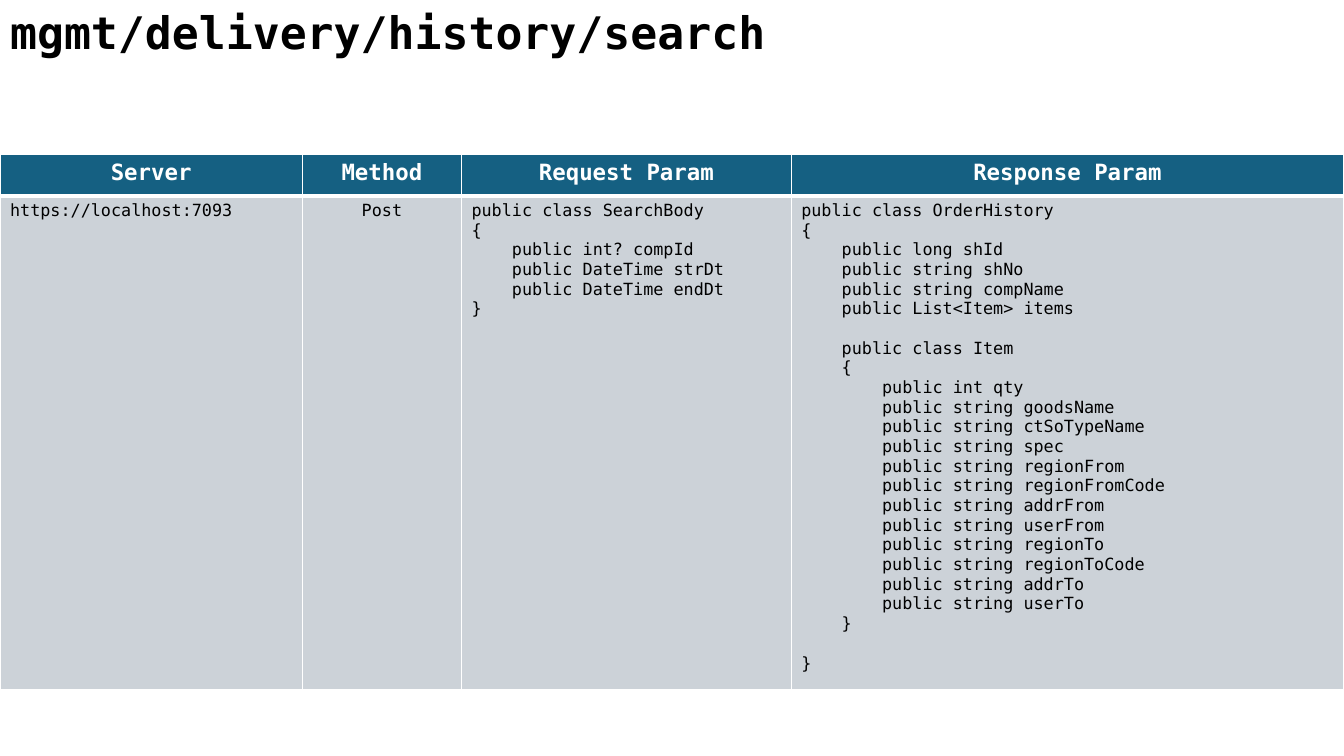
from lxml.etree import SubElement
from pptx import Presentation
from pptx.dml.color import RGBColor
from pptx.enum.text import MSO_ANCHOR, MSO_AUTO_SIZE, PP_ALIGN
from pptx.oxml.ns import qn
from pptx.util import Cm, Pt

HUES = {"ink": "000000", "paper": "FFFFFF", "head": "156082", "body": "CCD2D8"}
FONT = "DejaVu Sans Mono"

REQUEST = """public class SearchBody
{
    public int? compId
    public DateTime strDt
    public DateTime endDt
}"""

RESPONSE = """public class OrderHistory
{
    public long shId
    public string shNo
    public string compName
    public List<Item> items

    public class Item
    {
        public int qty
        public string goodsName
        public string ctSoTypeName
        public string spec
        public string regionFrom
        public string regionFromCode
        public string addrFrom
        public string userFrom
        public string regionTo
        public string regionToCode
        public string addrTo
        public string userTo
    }

}"""

COLUMNS = [
    ("Server", 7.62, "https://localhost:7093", PP_ALIGN.LEFT),
    ("Method", 4.01, "Post", PP_ALIGN.CENTER),
    ("Request Param", 8.31, REQUEST, PP_ALIGN.LEFT),
    ("Response Param", 13.92, RESPONSE, PP_ALIGN.LEFT),
]
ROWS = [1.04, 12.14]


class Deck:
    def __init__(self):
        self.show = Presentation()
        self.show.slide_width = Cm(33.87)
        self.show.slide_height = Cm(19.05)
        self.slide = self.show.slides.add_slide(self.show.slide_layouts[5])

    def label(self, frame, text, size, hue, bold, align):
        frame.text = text
        for para in frame.paragraphs:
            para.alignment = align
            for run in para.runs:
                run.font.name = FONT
                run.font.size = Pt(size)
                run.font.bold = bold
                run.font.color.rgb = RGBColor.from_string(HUES[hue])
            if not para.runs:
                end = SubElement(para._p, qn("a:endParaRPr"), sz=str(size * 100))
                SubElement(end, qn("a:latin"), typeface=FONT)

    def title(self, text, width, height):
        box = self.slide.shapes.title
        box.left, box.top = Cm(0), Cm(0)
        box.width, box.height = Cm(width), Cm(height)
        frame = box.text_frame
        frame.word_wrap = False
        frame.auto_size = MSO_AUTO_SIZE.SHAPE_TO_FIT_TEXT
        frame.vertical_anchor = MSO_ANCHOR.TOP
        self.label(frame, text, 32, "ink", True, PP_ALIGN.LEFT)

    def border(self, cell, widths):
        props = cell._tc.get_or_add_tcPr()
        for side, width in zip("LRTB", widths):
            line = SubElement(props, qn(f"a:ln{side}"), w=str(Pt(width)))
            fill = SubElement(line, qn("a:solidFill"))
            SubElement(fill, qn("a:srgbClr"), val=HUES["paper"])

    def cell(self, cell, text, size, hue, bold, align, back, widths):
        self.border(cell, widths)
        cell.fill.solid()
        cell.fill.fore_color.rgb = RGBColor.from_string(HUES[back])
        self.label(cell.text_frame, text, size, hue, bold, align)

    def table(self, top, columns, rows):
        width = sum(column[1] for column in columns)
        grid = self.slide.shapes.add_table(
            len(rows), len(columns), Cm(0), Cm(top), Cm(width), Cm(sum(rows))
        ).table
        for row, height in zip(grid.rows, rows):
            row.height = Cm(height)
        for col, (head, wide, body, align) in enumerate(columns):
            grid.columns[col].width = Cm(wide)
            self.cell(grid.cell(0, col), head, 16, "paper", True,
                      PP_ALIGN.CENTER, "head", (1, 1, 1, 3))
            self.cell(grid.cell(1, col), body, 12, "ink", False,
                      align, "body", (1, 1, 3, 1))

    def save(self):
        self.show.save("out.pptx")


def main():
    deck = Deck()
    deck.table(3.89, COLUMNS, ROWS)
    deck.title("mgmt/delivery/history/search", 19.61, 1.62)
    deck.save()


if __name__ == "__main__":
    main()
